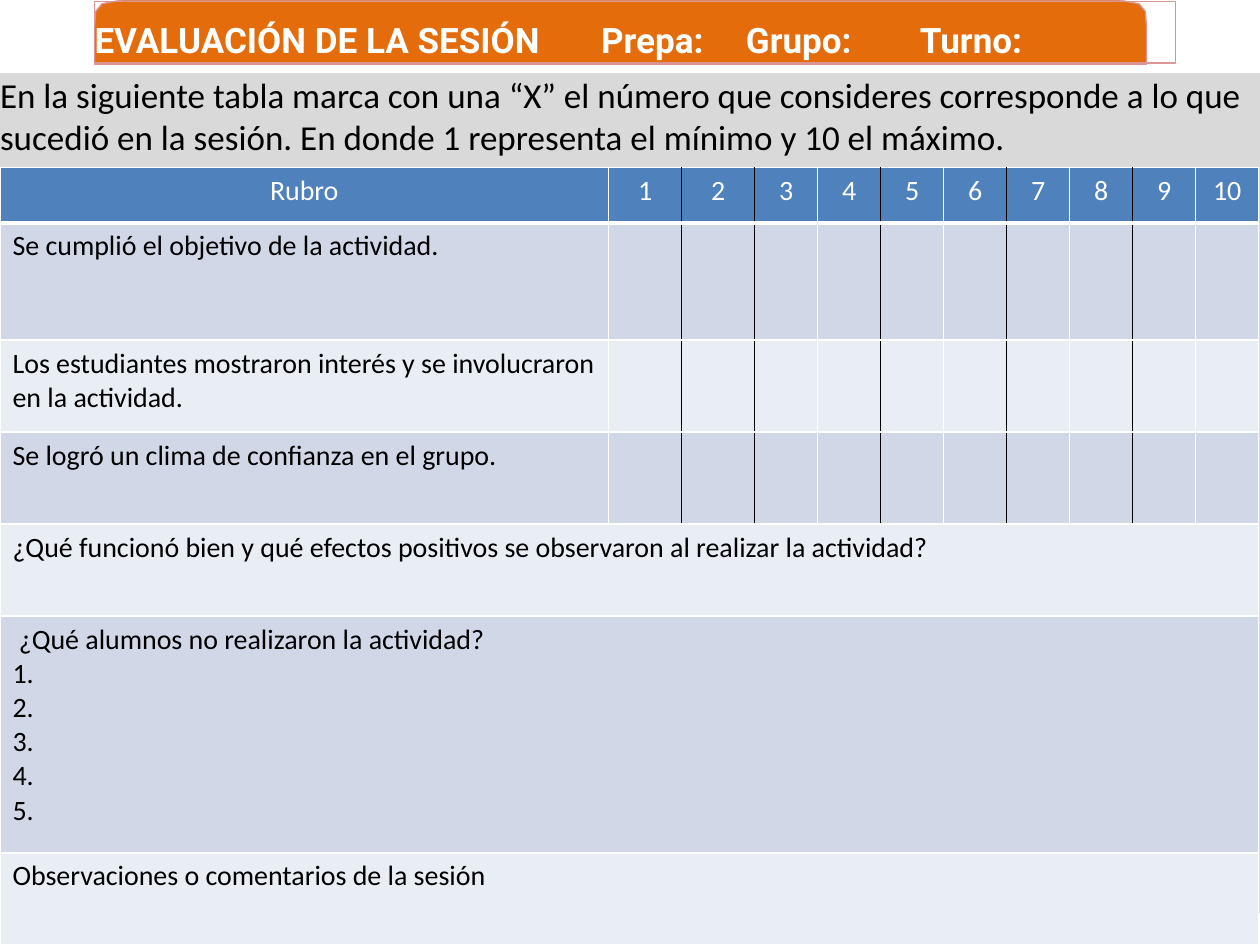
"""Build the session evaluation slide."""
from lxml import etree
from pptx import Presentation
from pptx.dml.color import RGBColor
from pptx.enum.text import MSO_ANCHOR, MSO_AUTO_SIZE, PP_ALIGN
from pptx.oxml.ns import qn
from pptx.util import Inches, Pt

LEFT, CENTER = PP_ALIGN.LEFT, PP_ALIGN.CENTER
TOP, FIXED = MSO_ANCHOR.TOP, MSO_AUTO_SIZE.NONE

TITLE = ["EVALUACIÓN DE LA SESIÓN", "\tPrepa:", "\tGrupo:", "\tTurno:"]
STOPS = [4.02, 5.17, 6.55]
INTRO = ("En la siguiente tabla marca con una “X” el número que consideres "
         "corresponde a lo que sucedió en la sesión. En donde 1 representa "
         "el mínimo y 10 el máximo.")
SCORES = [str(n) for n in range(1, 11)]
ROWS = [
    (0.44, ["Rubro"]),
    (0.93, ["Se cumplió el objetivo de la actividad."]),
    (0.73, ["Los estudiantes mostraron interés y se involucraron en la actividad."]),
    (0.73, ["Se logró un clima de confianza en el grupo."]),
    (0.73, ["¿Qué funcionó bien y qué efectos positivos se observaron "
            "al realizar la actividad?"]),
    (1.88, [" ¿Qué alumnos no realizaron la actividad?"]
     + [f"{n}." for n in range(1, 6)]),
    (0.73, ["Observaciones o comentarios de la sesión"]),
]
COLS = [4.83] + [0.58] * 2 + [0.5] * 8
SCORED = 4
DARK = {1, 2, 4, 6, 8}
CORNER = [(127, 0), (97, 0), (81, 3), (76, 9), (75, 22), (75, 51)]
ORANGE, PINK, GREY, BLUE = "E46C0A", "D99694", "D9D9D9", "4F81BD"
BANDS = ["E9EDF4", "D0D8E8"]
WHITE, BLACK = "FFFFFF", "000000"


def paint(fmt, color):
    fmt.solid()
    fmt.fore_color.rgb = RGBColor.from_string(color)


def write(para, text, size, color, font="Calibri", bold=False):
    run = para.add_run()
    run.text = text
    run.font.name, run.font.size, run.font.bold = font, Pt(size), bold
    paint(run.font.fill, color)


def place(shape, left, top, width, height, inset=0):
    shape.left, shape.top = Inches(left), Inches(top)
    shape.width, shape.height = Inches(width), Inches(height)
    frame = shape.text_frame
    frame.margin_left = frame.margin_right = frame.margin_bottom = 0
    frame.margin_top = Inches(inset)
    frame.vertical_anchor, frame.auto_size = TOP, FIXED
    frame.word_wrap = True
    para = frame.paragraphs[0]
    para.alignment, para.space_before = LEFT, Pt(0)
    return para


def edge(shape):
    paint(shape.line.fill, PINK)
    shape.line.width = Pt(0.75)


def border(cell, side, color, width=1):
    line = etree.SubElement(cell._tc.get_or_add_tcPr(), qn(f"a:ln{side}"),
                            w=str(Pt(width)))
    fill = etree.SubElement(line, qn("a:solidFill"))
    etree.SubElement(fill, qn("a:srgbClr"), val=color)


def add_banner(slide):
    mirror = [(985 - x, y) for x, y in reversed(CORNER)]
    pen = slide.shapes.build_freeform(*CORNER[0], scale=9144)
    pen.add_line_segments(CORNER[1:] + mirror, close=True)
    banner = pen.convert_to_shape()
    banner.shadow.inherit = False
    paint(banner.fill, ORANGE)
    edge(banner)
    slide.shapes._spTree.insert(2, banner._element)


def add_title(slide):
    title = slide.shapes.title
    para = place(title, 0.75, 0.01, 8.58, 0.49, 0.14)
    edge(title)
    tabs = etree.SubElement(para._p.get_or_add_pPr(), qn("a:tabLst"))
    for stop in STOPS:
        etree.SubElement(tabs, qn("a:tab"), pos=str(Inches(stop)), algn="l")
    for text in TITLE:
        write(para, text, 20, WHITE, "Roboto", True)


def add_intro(slide):
    body = slide.placeholders[1]
    para = place(body, 0, 0.58, 10, 6.67)
    paint(body.fill, GREY)
    props = para._p.get_or_add_pPr()
    props.set("marL", "0")
    props.set("indent", "0")
    etree.SubElement(props, qn("a:buNone"))
    write(para, INTRO, 20, BLACK)


def add_grid(slide):
    high = sum(height for height, _ in ROWS)
    table = slide.shapes.add_table(len(ROWS), len(COLS), 0, Inches(1.33),
                                   Inches(10), Inches(high)).table
    for col, width in zip(table.columns, COLS):
        col.width = Inches(width)
    for r, (height, lines) in enumerate(ROWS):
        table.rows[r].height = Inches(height)
        head, scored = r == 0, r < SCORED
        for c in range(len(COLS)):
            cell = table.cell(r, c)
            border(cell, "L", BLACK if scored and c - 1 in DARK else WHITE)
            border(cell, "R", BLACK if scored and c in DARK else WHITE)
            border(cell, "T", WHITE)
            border(cell, "B", WHITE, 3 if head else 1)
            paint(cell.fill, BLUE if head else BANDS[r % 2])
            texts = lines if c == 0 else [SCORES[c - 1]] if head else []
            for i, text in enumerate(texts):
                frame = cell.text_frame
                para = frame.add_paragraph() if i else frame.paragraphs[0]
                para.alignment = CENTER if head else LEFT
                write(para, text, 16, WHITE if head else BLACK)
        if not scored:
            table.cell(r, 0).merge(table.cell(r, len(COLS) - 1))


def main():
    deck = Presentation()
    deck.slide_width, deck.slide_height = Inches(10), Inches(7.5)
    slide = deck.slides.add_slide(deck.slide_layouts[1])
    add_title(slide)
    add_intro(slide)
    add_banner(slide)
    add_grid(slide)
    deck.save("out.pptx")


if __name__ == "__main__":
    main()
